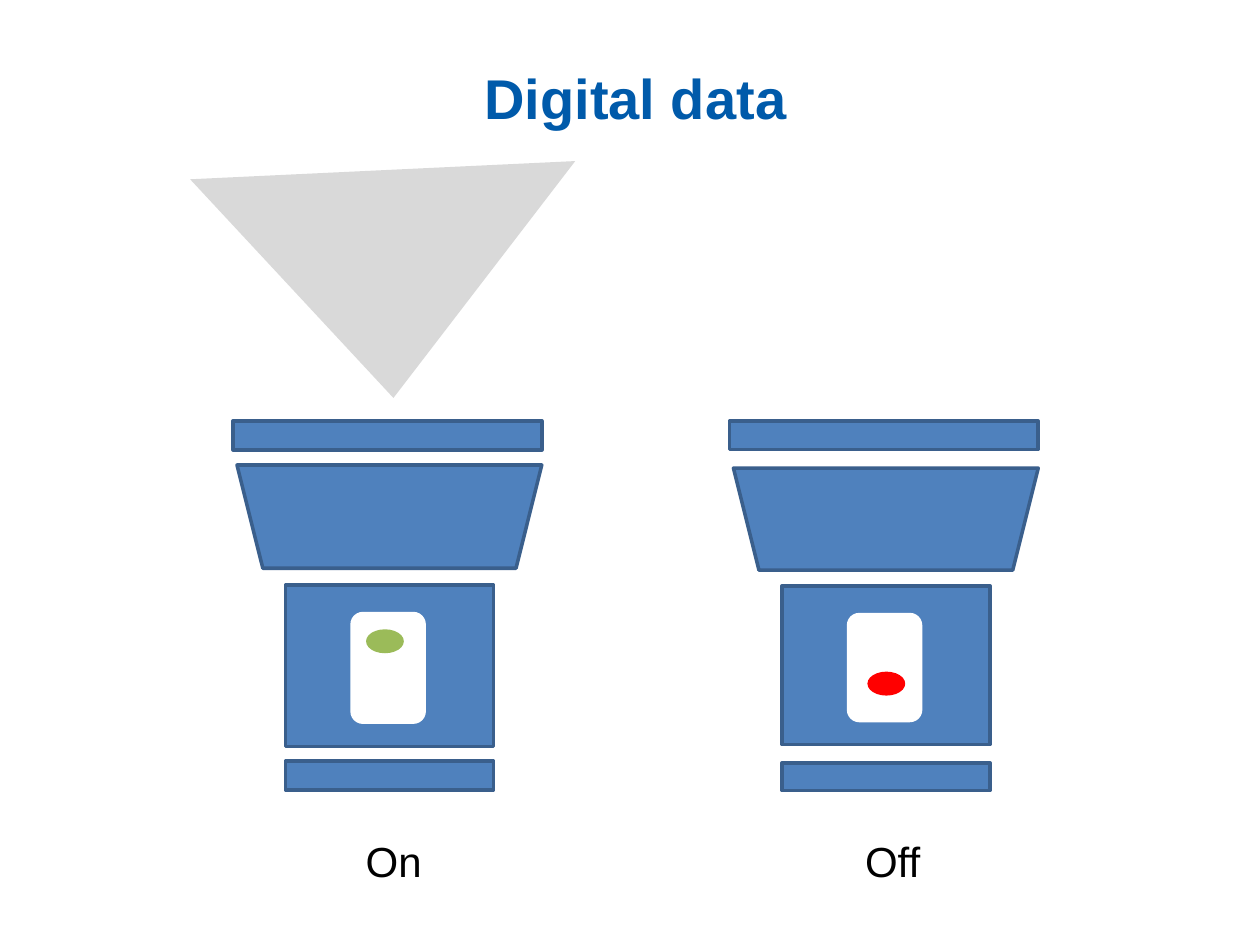
import pptx
import pptx.util
import pptx.dml.color
import pptx.enum.shapes
import pptx.enum.text

Pt = pptx.util.Pt
RGBColor = pptx.dml.color.RGBColor
Shape = pptx.enum.shapes.MSO_SHAPE
Align = pptx.enum.text.PP_ALIGN
Anchor = pptx.enum.text.MSO_ANCHOR

TITLE_BLUE = RGBColor(0x00, 0x5A, 0xAA)
TORCH_BLUE = RGBColor(0x4F, 0x81, 0xBD)
TORCH_EDGE = RGBColor(0x3A, 0x5F, 0x8C)
WHITE = RGBColor(0xFF, 0xFF, 0xFF)
GREEN = RGBColor(0x9B, 0xBB, 0x59)
RED = RGBColor(0xFF, 0x00, 0x00)
BEAM_GREY = RGBColor(0xD9, 0xD9, 0xD9)
BLACK = RGBColor(0x00, 0x00, 0x00)


def add_part(group, kind, left, top, width, height, fill, edge=None, rotation=0):
    shape = group.shapes.add_shape(kind, Pt(left), Pt(top), Pt(width), Pt(height))
    shape.shadow.inherit = False
    shape.rotation = rotation
    shape.fill.solid()
    shape.fill.fore_color.rgb = fill
    if edge is None:
        shape.line.fill.background()
    else:
        shape.line.color.rgb = edge
        shape.line.width = Pt(2)


def set_text(frame, text, size, color, bold):
    frame.word_wrap = True
    frame.text = text
    paragraph = frame.paragraphs[0]
    paragraph.alignment = Align.CENTER
    paragraph.font.name = "Arial"
    paragraph.font.size = Pt(size)
    paragraph.font.bold = bold
    paragraph.font.color.rgb = color


presentation = pptx.Presentation()
presentation.slide_width = Pt(720)
presentation.slide_height = Pt(540)
slide = presentation.slides.add_slide(presentation.slide_layouts[5])

title = slide.shapes.title
title.left, title.top, title.width, title.height = Pt(3.6), Pt(0), Pt(719.3), Pt(100)
title.text_frame.margin_top = Pt(14.4)
title.text_frame.vertical_anchor = Anchor.MIDDLE
set_text(title.text_frame, "Digital data", 32, TITLE_BLUE, True)

torches = [
    {"label": "On", "offset": 0, "label_left": 162, "light": GREEN, "light_at": (209.2, 359.6),
     "base": (434.9, 16.6), "body": (334.4, 92.2), "head": (265.7, 59),
     "lens": (240.5, 16.6), "switch": (349.6, 64.1)},
    {"label": "Off", "offset": 283.7, "label_left": 447.1, "light": RED, "light_at": (212, 383.8),
     "base": (436, 15.8), "body": (334.8, 90.7), "head": (267.5, 58.3),
     "lens": (240.7, 16.2), "switch": (350.2, 62.6)},
]
parts = [
    ("base", Shape.RECTANGLE, 163.2, 118.8, TORCH_BLUE, TORCH_EDGE, 0),
    ("body", Shape.RECTANGLE, 163.2, 118.8, TORCH_BLUE, TORCH_EDGE, 0),
    ("head", Shape.TRAPEZOID, 135.4, 174.2, TORCH_BLUE, TORCH_EDGE, 180),
    ("lens", Shape.RECTANGLE, 133.2, 176.4, TORCH_BLUE, TORCH_EDGE, 0),
    ("switch", Shape.ROUNDED_RECTANGLE, 200.2, 43.2, WHITE, None, 0),
]

for torch in torches:
    group = slide.shapes.add_group_shape()
    offset = torch["offset"]
    for name, kind, left, width, fill, edge, rotation in parts:
        top, height = torch[name]
        add_part(group, kind, left + offset, top, width, height, fill, edge, rotation)
    light_left, light_top = torch["light_at"]
    add_part(group, Shape.OVAL, light_left + offset, light_top, 21.6, 13.7, torch["light"])
    if torch["label"] == "On":
        add_part(group, Shape.ISOSCELES_TRIANGLE, 111.6, 97.2, 220.3, 130.3,
                 BEAM_GREY, rotation=177.3)

for torch in torches:
    label = slide.shapes.add_textbox(Pt(torch["label_left"]), Pt(473.8), Pt(126), Pt(36))
    set_text(label.text_frame, torch["label"], 24, BLACK, False)

presentation.save("out.pptx")
